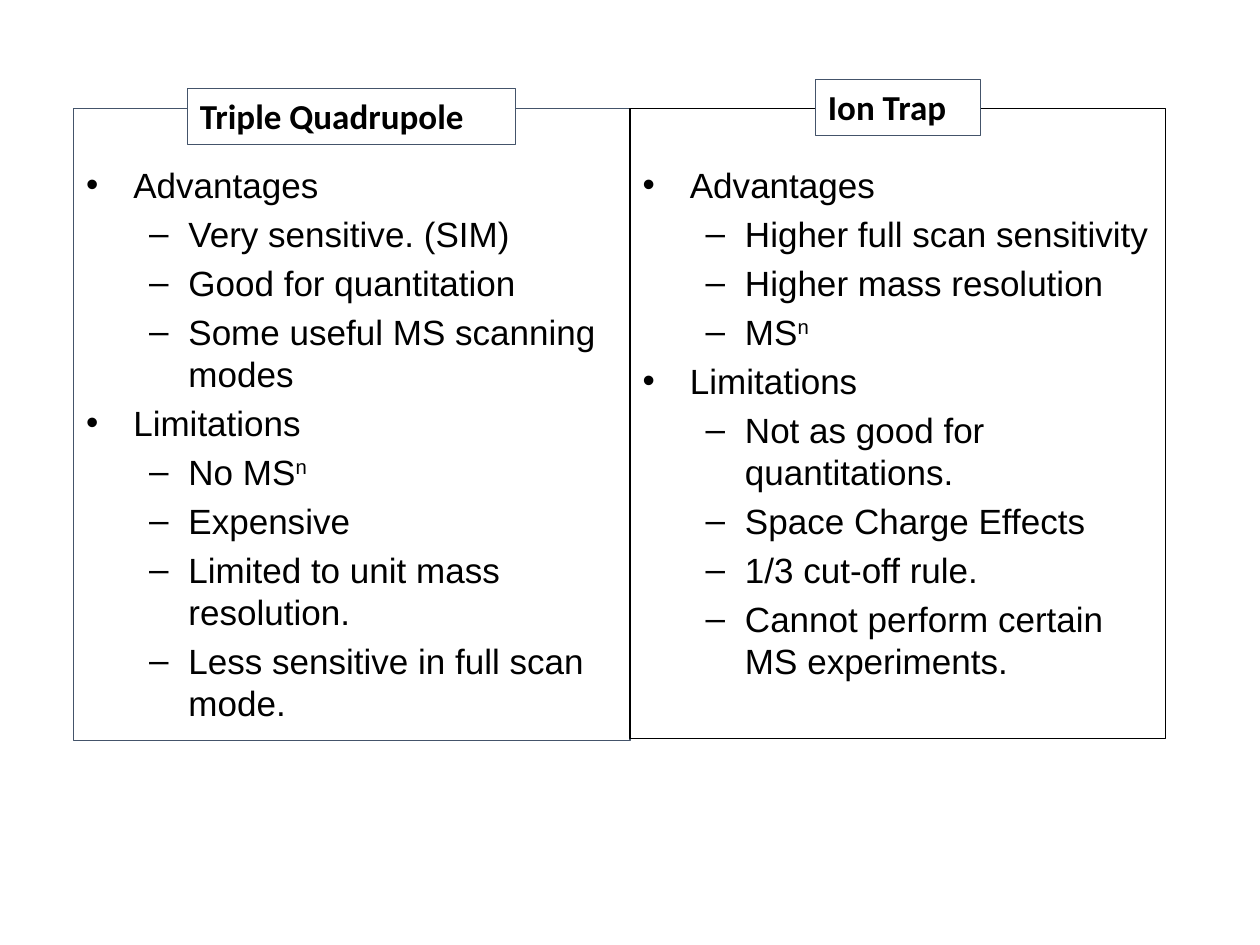
import pptx
import pptx.dml.color
import pptx.enum.text
import pptx.util
from pptx.util import Cm

BLACK = pptx.dml.color.RGBColor(0x00, 0x00, 0x00)
WHITE = pptx.dml.color.RGBColor(0xFF, 0xFF, 0xFF)
SLATE = pptx.dml.color.RGBColor(0x44, 0x54, 0x6A)

TEXT_SIZE = pptx.util.Pt(20)
LIST_FONT = {"name": "Arial", "size": TEXT_SIZE, "bold": False}
LABEL_FONT = {"name": "Calibri", "size": TEXT_SIZE, "bold": True}
LIST_FRAME = {
    "word_wrap": True,
    "auto_size": pptx.enum.text.MSO_AUTO_SIZE.NONE,
    "vertical_anchor": pptx.enum.text.MSO_ANCHOR.TOP,
    "margin_top": Cm(1.1),
}
LABEL_FRAME = {**LIST_FRAME, "margin_top": Cm(0.13)}

TRIPLE_QUADRUPOLE = {
    "Advantages": [
        "Very sensitive. (SIM)",
        "Good for quantitation",
        "Some useful MS scanning modes",
    ],
    "Limitations": [
        "No MS^n",
        "Expensive",
        "Limited to unit mass resolution.",
        "Less sensitive in full scan mode.",
    ],
}
ION_TRAP = {
    "Advantages": [
        "Higher full scan sensitivity",
        "Higher mass resolution",
        "MS^n",
    ],
    "Limitations": [
        "Not as good for quantitations.",
        "Space Charge Effects",
        "1/3 cut-off rule.",
        "Cannot perform certain MS experiments.",
    ],
}


def apply_format(target, values):
    """Set each named attribute of the target."""
    for name, value in values.items():
        setattr(target, name, value)


def place(shape, left, top, width, height):
    """Position a shape, with lengths in centimetres."""
    apply_format(shape, {"left": Cm(left), "top": Cm(top),
                         "width": Cm(width), "height": Cm(height)})


def outline(shape, color):
    """Draw a thin border around a shape."""
    shape.line.color.rgb = color
    shape.line.width = pptx.util.Pt(0.75)


def add_run(paragraph, text, font):
    """Append a formatted black run and return it."""
    run = paragraph.add_run()
    run.text = text
    apply_format(run.font, font)
    run.font.color.rgb = BLACK
    return run


def fill_list(placeholder, box, color, sections):
    """Write headings and their points; a caret starts a superscript."""
    place(placeholder, *box)
    outline(placeholder, color)
    frame = placeholder.text_frame
    apply_format(frame, LIST_FRAME)
    entries = [
        entry
        for heading, points in sections.items()
        for entry in [(0, heading)] + [(1, point) for point in points]
    ]
    for index, (level, text) in enumerate(entries):
        paragraph = frame.add_paragraph() if index else frame.paragraphs[0]
        apply_format(paragraph, {
            "level": level,
            "space_before": pptx.util.Pt(4 if index else 0),
        })
        base, _, superscript = text.partition("^")
        add_run(paragraph, base, LIST_FONT)
        if superscript:
            run = add_run(paragraph, superscript, LIST_FONT)
            run.font._element.set("baseline", "30000")


def add_label(slide, box, text):
    """Add a bordered white label over the top edge of a list."""
    label = slide.shapes.add_textbox(0, 0, 0, 0)
    place(label, *box)
    label.fill.solid()
    label.fill.fore_color.rgb = WHITE
    outline(label, SLATE)
    apply_format(label.text_frame, LABEL_FRAME)
    add_run(label.text_frame.paragraphs[0], text, LABEL_FONT)


def main():
    """Build the comparison slide."""
    presentation = pptx.Presentation()
    presentation.slide_width, presentation.slide_height = Cm(25.4), Cm(19.05)
    slide = presentation.slides.add_slide(
        presentation.slide_layouts.get_by_name("Two Content"))
    title, left_list, right_list = slide.placeholders
    title.element.getparent().remove(title.element)

    fill_list(left_list, (1.48, 2.19, 11.22, 12.74), SLATE, TRIPLE_QUADRUPOLE)
    fill_list(right_list, (12.7, 2.19, 10.8, 12.7), BLACK, ION_TRAP)
    add_label(slide, (3.78, 1.78, 6.61, 1.13), "Triple Quadrupole")
    add_label(slide, (16.44, 1.6, 3.33, 1.13), "Ion Trap")
    presentation.save("out.pptx")


if __name__ == "__main__":
    main()
